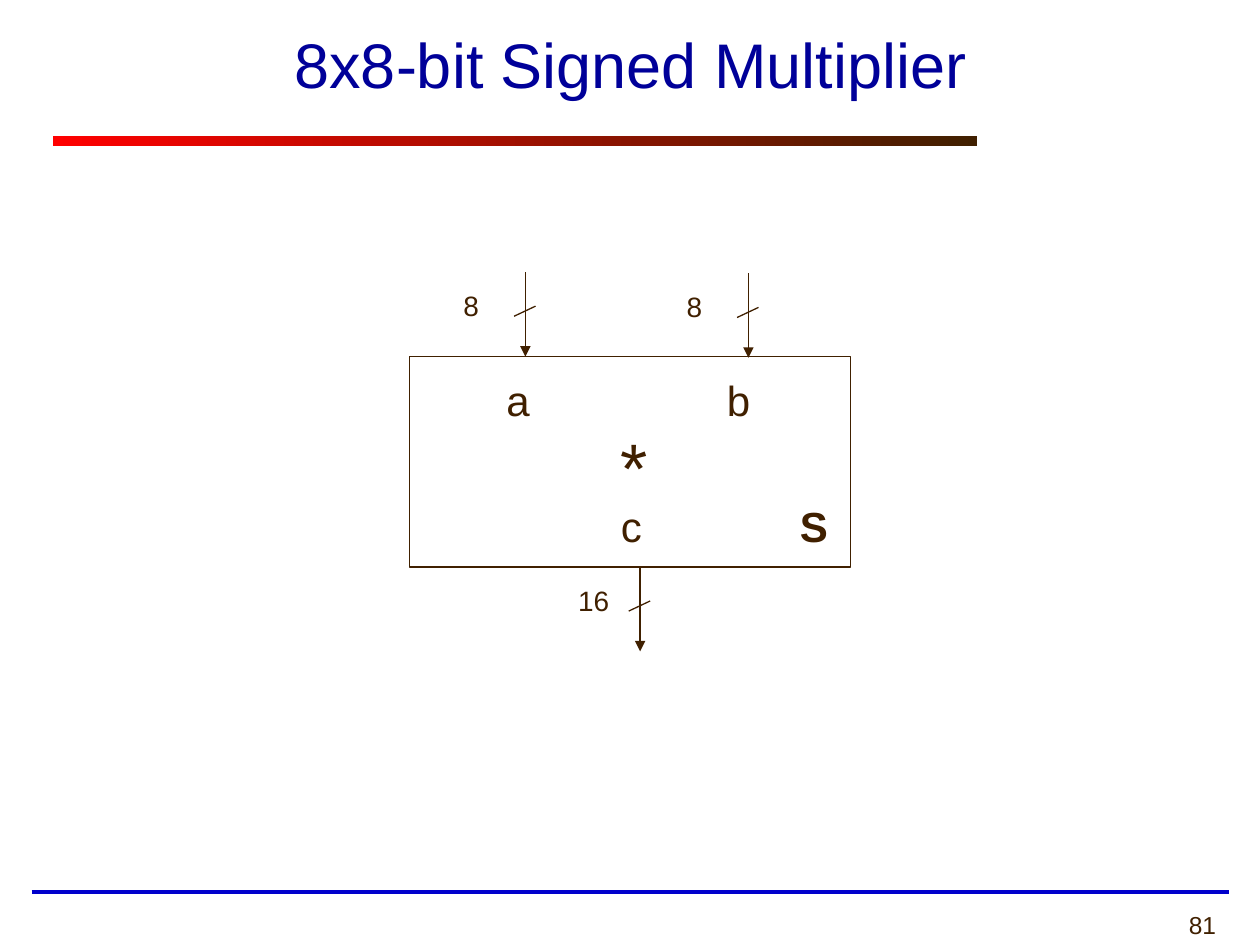
from dataclasses import dataclass

from lxml import etree
from pptx import Presentation
from pptx import util as u
from pptx.dml.color import RGBColor
from pptx.enum import shapes, text
from pptx.oxml import ns


@dataclass(frozen=True)
class Theme:
    font: str = "Arial"
    ink: str = "402000"
    heading: str = "000099"
    rule: str = "0000CC"
    accent: str = "FF0000"
    title_size: float = 36
    symbol_size: float = 40
    port_size: float = 24
    width_size: float = 16
    number_size: float = 14
    thin: float = 0.75
    thick: float = 2.25


THEME = Theme()


def add_text(page, words, left, top, width, height, size, color=THEME.ink,
             bold=False, align=text.PP_ALIGN.LEFT, anchor=text.MSO_ANCHOR.TOP):
    box = page.shapes.add_textbox(*map(u.Inches, (left, top, width, height)))
    frame = box.text_frame
    frame.word_wrap = True
    frame.vertical_anchor = anchor
    para = frame.paragraphs[0]
    para.alignment = align
    span = para.add_run()
    span.text = words
    span.font.name = THEME.font
    span.font.size = u.Pt(size)
    span.font.bold = bold
    span.font.color.rgb = RGBColor.from_string(color)


def add_line(page, start, end, color=THEME.ink, weight=THEME.thin, arrow=False):
    line = page.shapes.add_connector(
        shapes.MSO_CONNECTOR.STRAIGHT, *map(u.Inches, (*start, *end)))
    line.line.color.rgb = RGBColor.from_string(color)
    line.line.width = u.Pt(weight)
    if arrow:
        etree.SubElement(line.line._get_or_add_ln(), ns.qn("a:tailEnd"), type="triangle")
    etree.SubElement(line._element.spPr, ns.qn("a:effectLst"))


def add_rectangle(page, left, top, width, height):
    rectangle = page.shapes.add_shape(
        shapes.MSO_SHAPE.RECTANGLE, *map(u.Inches, (left, top, width, height)))
    rectangle.shadow.inherit = False
    return rectangle


def add_header(page, left, top, width, height):
    bar = add_rectangle(page, left, top + 1.08, 0.8 * width, 0.08)
    bar.fill.gradient()
    bar.fill.gradient_angle = 0
    for stop, color in zip(bar.fill.gradient_stops, (THEME.accent, THEME.ink)):
        stop.color.rgb = RGBColor.from_string(color)
    bar.line.fill.background()
    add_text(page, "8x8-bit Signed Multiplier", left, top, width, height,
             THEME.title_size, color=THEME.heading,
             align=text.PP_ALIGN.CENTER, anchor=text.MSO_ANCHOR.MIDDLE)


def add_footer(page, left, top, width):
    add_line(page, (left, top), (left + width, top), THEME.rule, THEME.thick)
    add_text(page, "81", left + width - 2.17, top + 0.09, 2.17, 0.33,
             THEME.number_size, align=text.PP_ALIGN.RIGHT)


def add_bus(page, bits, x, top, length=0.67):
    add_line(page, (x, top), (x, top + length), arrow=True)
    add_line(page, (x - 0.09, top + 0.35), (x + 0.08, top + 0.27))
    add_text(page, bits, x - 0.59, top + 0.08, 0.52, 0.37, THEME.width_size)


def add_multiplier(page, left, top, width, height):
    block = add_rectangle(page, left, top, width, height)
    block.fill.background()
    block.line.color.rgb = RGBColor.from_string(THEME.ink)
    block.line.width = u.Pt(THEME.thin)

    add_bus(page, "8", left + 0.92, top - 0.67)
    add_bus(page, "8", left + 2.69, top - 0.66)
    add_bus(page, "16", left + 1.83, top + height)

    ports = (("a", 0.67, 0.09), ("b", 2.42, 0.09), ("c", 1.58, 1.09))
    for name, across, down in ports:
        add_text(page, name, left + across, top + down, 0.55, 0.51, THEME.port_size)
    add_text(page, "S", left + 3, top + 1.09, 0.48, 0.51, THEME.port_size, bold=True)
    add_text(page, "*", left + 1.58, top + 0.48, 0.5, 0.77, THEME.symbol_size)


def main():
    deck = Presentation()
    deck.slide_width = u.Inches(10)
    deck.slide_height = u.Inches(7.5)
    page = deck.slides.add_slide(deck.slide_layouts[6])
    add_footer(page, 0.25, 7.08, 9.5)
    add_header(page, 0.42, 0, 9.17, 1)
    add_multiplier(page, 3.25, 2.83, 3.5, 1.67)
    deck.save("out.pptx")


if __name__ == "__main__":
    main()
